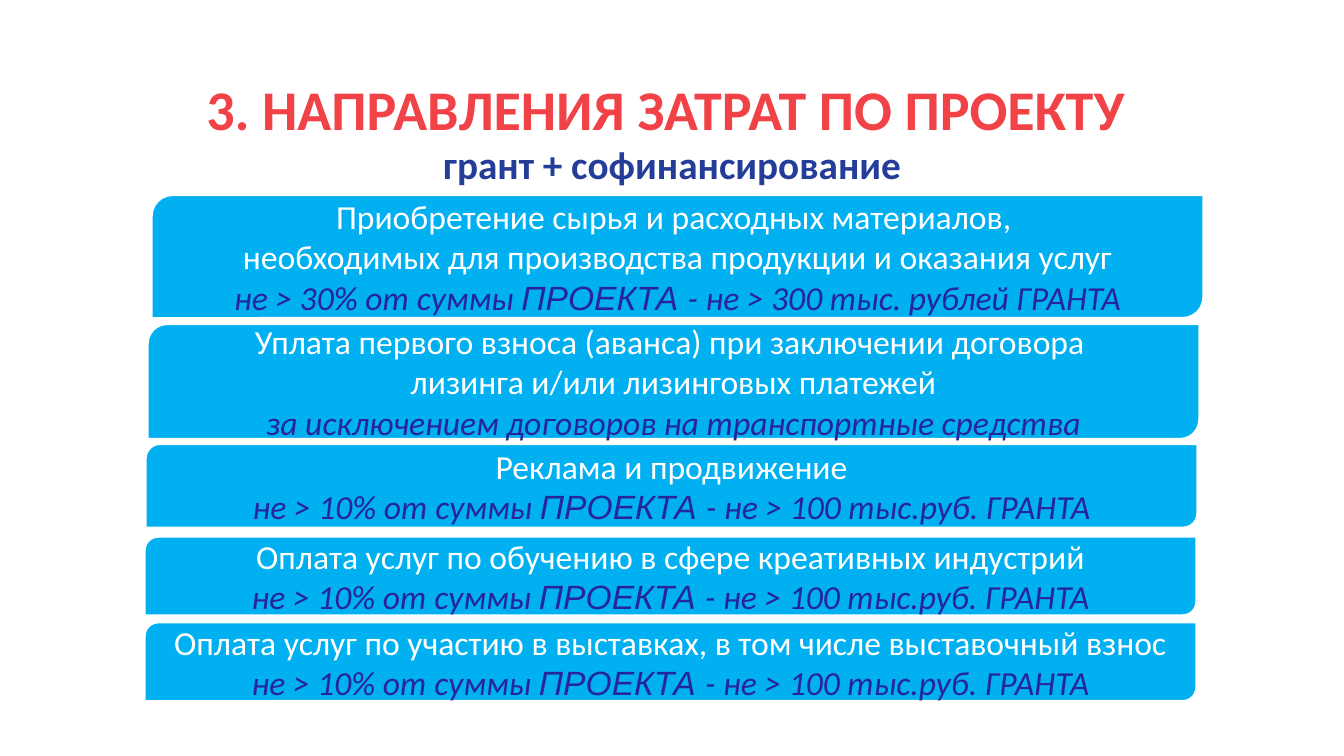
from dataclasses import dataclass

from pptx import Presentation
from pptx.dml.color import RGBColor
from pptx.enum.shapes import MSO_SHAPE
from pptx.enum.text import MSO_ANCHOR, PP_ALIGN
from pptx.util import Inches, Pt


@dataclass(frozen=True)
class Theme:
    heading: RGBColor = RGBColor(0xF0, 0x42, 0x47)
    subheading: RGBColor = RGBColor(0x24, 0x3D, 0x99)
    bar: RGBColor = RGBColor(0x00, 0xB0, 0xF0)
    text: RGBColor = RGBColor(0xFF, 0xFF, 0xFF)
    limit: RGBColor = RGBColor(0x26, 0x26, 0x99)
    font: str = "Calibri"
    accent_font: str = "Arial"
    heading_size: Pt = Pt(40)
    subheading_size: Pt = Pt(28)
    bar_size: Pt = Pt(24)


THEME = Theme()
BAR_WIDTH = 10.42


def project_limit(percent, amount):
    return [f"не > {percent}% от суммы ", "ПРОЕКТА ", f"- не > {amount} ГРАНТА"]


TENTH = project_limit(10, "100 тыс.руб.")
COST_BARS = [
    (1.51, 1.94, 1.21,
     ["Приобретение сырья и расходных материалов, ",
      "необходимых для производства продукции и оказания услуг"],
     project_limit(30, "300 тыс. рублей")),
    (1.47, 3.22, 1.13,
     ["Уплата первого взноса (аванса) при заключении договора ",
      "лизинга и/или лизинговых платежей"],
     ["за исключением договоров на транспортные средства"]),
    (1.45, 4.41, 0.82, ["Реклама и продвижение"], TENTH),
    (1.44, 5.33, 0.77, ["Оплата услуг по обучению в сфере креативных индустрий"], TENTH),
    (1.44, 6.18, 0.77,
     ["Оплата услуг по участию в выставках, в том числе выставочный взнос"], TENTH),
]


def add_heading(page, left, top, width, height):
    box = page.shapes.add_textbox(Inches(left), Inches(top), Inches(width), Inches(height))
    frame = box.text_frame
    frame.word_wrap = True
    frame.margin_top = frame.margin_bottom = 0
    para = frame.paragraphs[0]
    para.alignment = PP_ALIGN.CENTER
    para.line_spacing = 0.96
    para.font.name = THEME.font
    para.font.bold = True
    heading = para.add_run()
    heading.text = "3. НАПРАВЛЕНИЯ ЗАТРАТ ПО ПРОЕКТУ "
    heading.font.size = THEME.heading_size
    heading.font.color.rgb = THEME.heading
    para.add_line_break()
    subheading = para.add_run()
    subheading.text = "грант + софинансирование"
    subheading.font.size = THEME.subheading_size
    subheading.font.color.rgb = THEME.subheading


def write_line(para, spans, color, italic):
    para.alignment = PP_ALIGN.CENTER
    para.font.name = THEME.font
    para.font.size = THEME.bar_size
    para.font.color.rgb = color
    para.font.italic = italic
    for text in spans:
        span = para.add_run()
        span.text = text
        if text == "ПРОЕКТА ":
            span.font.name = THEME.accent_font


def add_cost_bar(page, left, top, width, height, purpose, limit):
    bar = page.shapes.add_shape(
        MSO_SHAPE.ROUND_2_DIAG_RECTANGLE,
        Inches(left), Inches(top), Inches(width), Inches(height))
    bar.shadow.inherit = False
    bar.fill.solid()
    bar.fill.fore_color.rgb = THEME.bar
    bar.line.color.rgb = THEME.text
    bar.line.width = Pt(0.75)
    frame = bar.text_frame
    frame.word_wrap = True
    frame.vertical_anchor = MSO_ANCHOR.MIDDLE
    write_line(frame.paragraphs[0], purpose[:1], THEME.text, False)
    for line in purpose[1:]:
        write_line(frame.add_paragraph(), [line], THEME.text, False)
    write_line(frame.add_paragraph(), limit, THEME.limit, True)


def main():
    deck = Presentation()
    deck.slide_width = Inches(13.33)
    deck.slide_height = Inches(7.5)
    page = deck.slides.add_slide(deck.slide_layouts[6])
    add_heading(page, 0, 0.78, 13.33, 1.1)
    for left, top, height, purpose, limit in COST_BARS:
        add_cost_bar(page, left, top, BAR_WIDTH, height, purpose, limit)
    deck.save("out.pptx")


if __name__ == "__main__":
    main()
